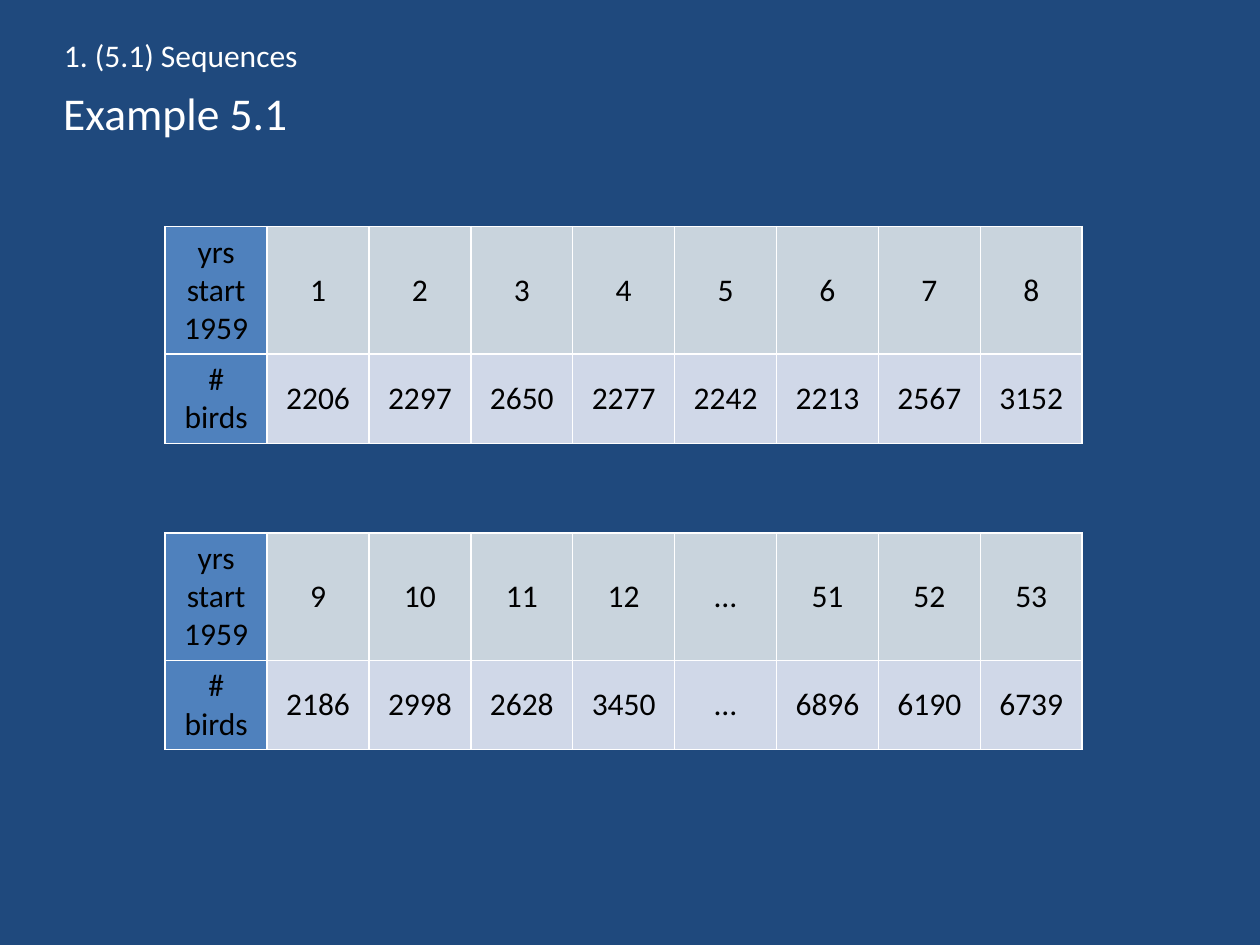
from lxml import etree
from pptx import Presentation
from pptx.dml.color import RGBColor
from pptx.enum import text
from pptx.oxml import ns
from pptx.util import Cm, Pt

COLORS = {
    "background": "1F497D",
    "light": "FFFFFF",
    "dark": "000000",
    "label": "4F81BD",
    "years": "C9D4DD",
    "birds": "D0D8E8",
}


def style_text(para, size, color, align):
    para.alignment = align
    para.font.name = "Calibri"
    para.font.size = Pt(size)
    para.font.color.rgb = RGBColor.from_string(COLORS[color])


def add_borders(cell):
    properties = cell._tc.get_or_add_tcPr()
    for side in ("a:lnL", "a:lnR", "a:lnT", "a:lnB"):
        line = etree.SubElement(properties, ns.qn(side), w=str(Pt(1)))
        fill = etree.SubElement(line, ns.qn("a:solidFill"))
        etree.SubElement(fill, ns.qn("a:srgbClr"), val=COLORS["light"])


deck = Presentation()
deck.slide_width, deck.slide_height = Cm(25.4), Cm(19.05)
page = deck.slides.add_slide(deck.slide_layouts[5])
page.background.fill.solid()
page.background.fill.fore_color.rgb = RGBColor.from_string(COLORS["background"])

# Title
title = page.shapes.title
title.left, title.top, title.width, title.height = Cm(1.02), Cm(1.57), Cm(22.86), Cm(1.37)
title.text_frame.text = "Example 5.1"
title.text_frame.vertical_anchor = text.MSO_ANCHOR.MIDDLE
style_text(title.text_frame.paragraphs[0], 26, "light", text.PP_ALIGN.LEFT)

# Section heading
section = page.shapes.add_textbox(Cm(1.04), Cm(0.61), Cm(22.68), Cm(1.02))
section.text_frame.word_wrap = True
section.text_frame.text = "1. (5.1) Sequences"
style_text(section.text_frame.paragraphs[0], 18, "light", text.PP_ALIGN.LEFT)

# Bird counts: top of the table, years, birds
counts = [
    (4.57, "1 2 3 4 5 6 7 8",
     "2206 2297 2650 2277 2242 2213 2567 3152"),
    (10.74, "9 10 11 12 … 51 52 53",
     "2186 2998 2628 3450 … 6896 6190 6739"),
]
for top, years, birds in counts:
    rows = [
        ("years", 2.57, ["yrs start 1959"] + years.split()),
        ("birds", 1.8, ["# birds"] + birds.split()),
    ]
    table = page.shapes.add_table(2, 9, Cm(3.33), Cm(top), Cm(18.49), Cm(4.37)).table
    for row, (kind, height, values) in enumerate(rows):
        table.rows[row].height = Cm(height)
        for column, value in enumerate(values):
            cell = table.cell(row, column)
            cell.text = value
            cell.vertical_anchor = text.MSO_ANCHOR.MIDDLE
            style_text(cell.text_frame.paragraphs[0], 18, "dark", text.PP_ALIGN.CENTER)
            cell.text_frame.paragraphs[0].font.bold = False
            add_borders(cell)
            cell.fill.solid()
            color = COLORS[kind if column else "label"]
            cell.fill.fore_color.rgb = RGBColor.from_string(color)

deck.save("out.pptx")
